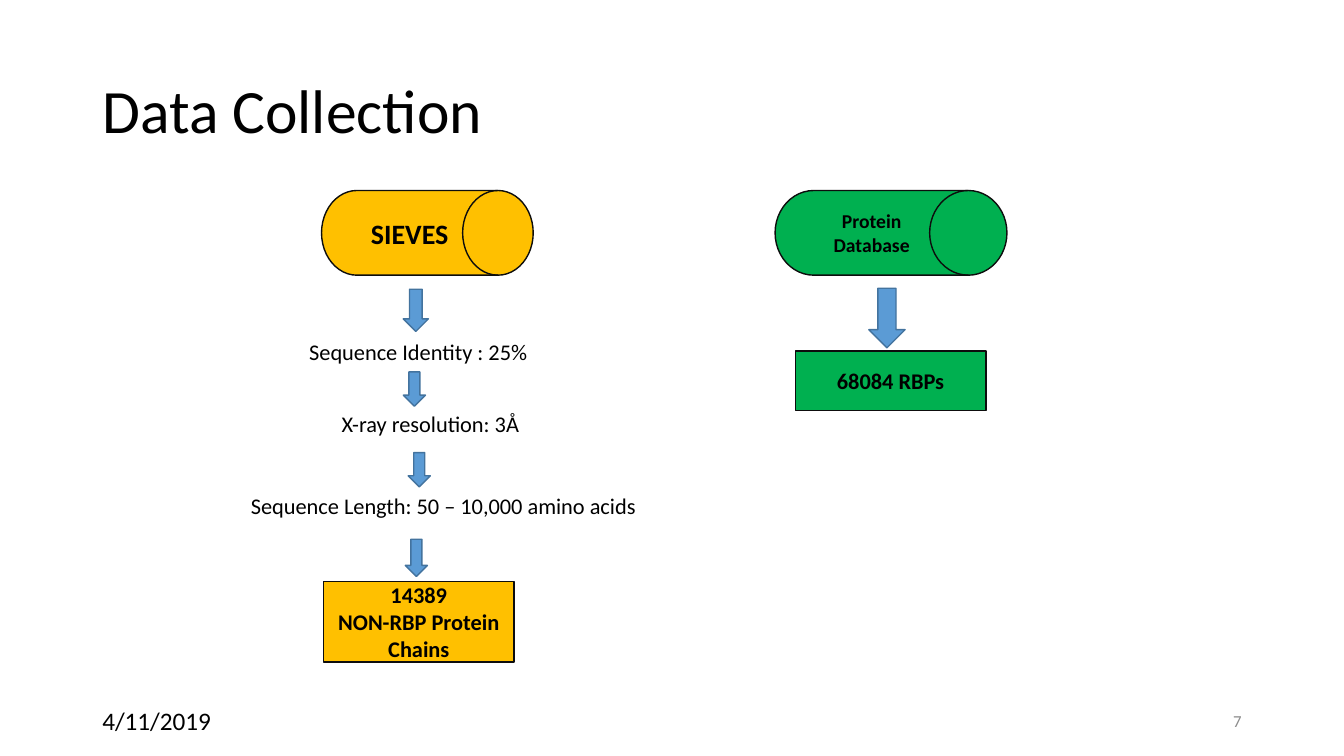
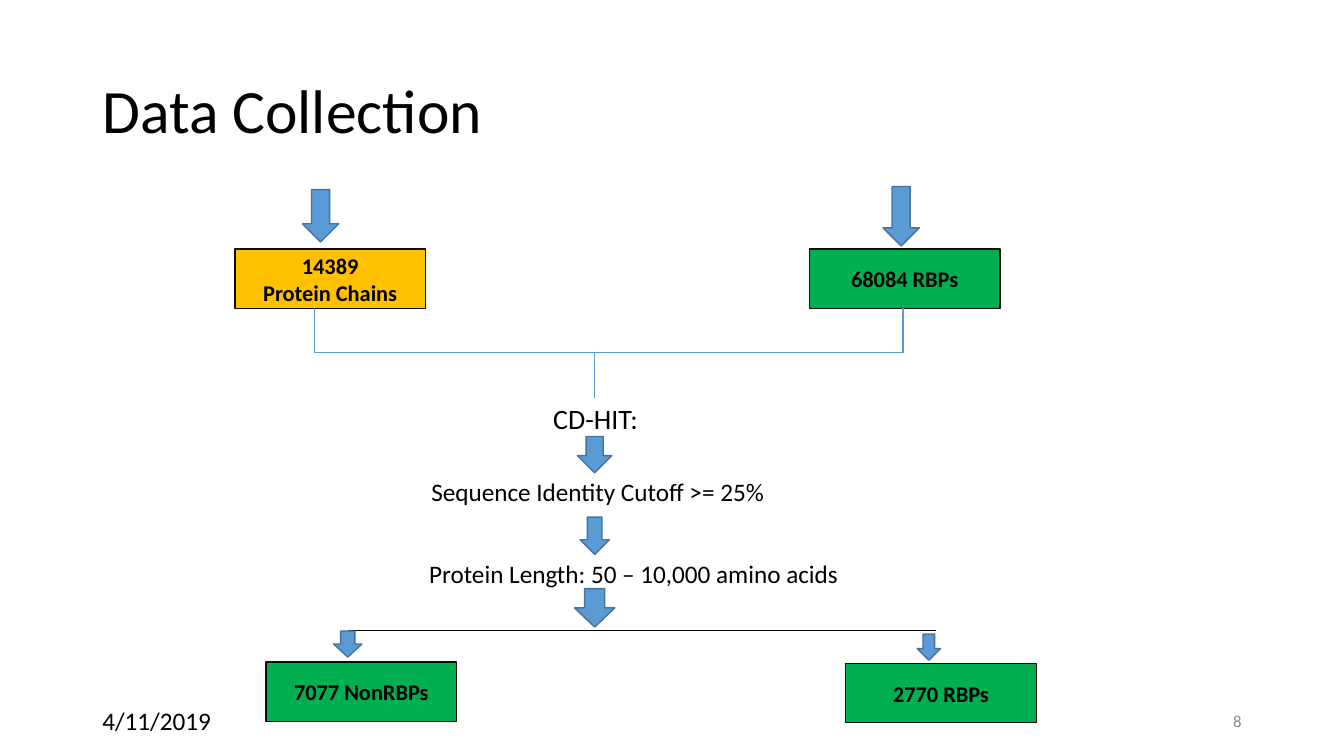
from dataclasses import dataclass

import lxml.etree
import pptx
import pptx.dml.color
import pptx.enum.shapes
import pptx.enum.text
import pptx.oxml.ns
import pptx.util

Pt = pptx.util.Pt
RGB = pptx.dml.color.RGBColor
KIND = pptx.enum.shapes.MSO_SHAPE
ALIGN = pptx.enum.text.PP_ALIGN
ANCHOR = pptx.enum.text.MSO_ANCHOR

FONT = "Calibri"
BLACK = RGB(0x00, 0x00, 0x00)
INK = RGB(0x0D, 0x0D, 0x0D)
GRAY = RGB(0x8C, 0x8C, 0x8C)
GOLD = RGB(0xFF, 0xC0, 0x00)
GREEN = RGB(0x00, 0xB0, 0x50)
BLUE = RGB(0x5B, 0x9B, 0xD5)
NAVY = RGB(0x43, 0x73, 0x9E)

BOX_W, BOX_H = 136.1, 42.5
DRUM_H = 60.5
LEFT, WIDTH = 66, 828
FOOT_TOP, FOOT_W, FOOT_H = 500.4, 216, 28.8


@dataclass
class Box:
    left: float
    top: float
    fill: RGB
    lines: tuple[str, ...]
    size: float = 16
    width: float = BOX_W
    height: float = BOX_H
    kind: KIND = KIND.RECTANGLE


@dataclass
class Arrow:
    mid: float
    top: float
    width: float
    height: float


@dataclass
class Label:
    left: float
    top: float
    width: float
    height: float
    text: str
    size: float
    color: RGB = BLACK
    align: ALIGN = ALIGN.LEFT
    anchor: ANCHOR = ANCHOR.TOP


@dataclass
class Line:
    start: tuple[float, float]
    end: tuple[float, float]
    color: RGB = BLUE
    weight: float = 1


def write(frame, lines: tuple[str, ...], size: float, color: RGB = BLACK,
          align: ALIGN = ALIGN.LEFT, anchor: ANCHOR = ANCHOR.TOP,
          bold: bool = False) -> None:
    """Fill a text frame with one paragraph per line."""
    frame.word_wrap = True
    frame.auto_size = pptx.enum.text.MSO_AUTO_SIZE.NONE
    frame.vertical_anchor = anchor
    for i, line in enumerate(lines):
        para = frame.paragraphs[0] if i == 0 else frame.add_paragraph()
        para.alignment = align
        run = para.add_run()
        run.text = line
        run.font.name = FONT
        run.font.size = Pt(size)
        run.font.bold = bold
        run.font.color.rgb = color


def add_form(slide, kind: KIND, left: float, top: float, width: float,
             height: float, fill: RGB, edge: RGB):
    form = slide.shapes.add_shape(kind, Pt(left), Pt(top), Pt(width), Pt(height))
    form.shadow.inherit = False
    form.fill.solid()
    form.fill.fore_color.rgb = fill
    form.line.color.rgb = edge
    form.line.width = Pt(1)
    return form


def draw_box(slide, box: Box) -> None:
    form = add_form(slide, box.kind, box.left, box.top, box.width, box.height,
                    box.fill, INK)
    write(form.text_frame, box.lines, box.size, align=ALIGN.CENTER,
          anchor=ANCHOR.MIDDLE, bold=True)


def draw_arrow(slide, arrow: Arrow) -> None:
    add_form(slide, KIND.DOWN_ARROW, arrow.mid - arrow.width / 2, arrow.top,
             arrow.width, arrow.height, BLUE, NAVY)


def draw_label(slide, label: Label) -> None:
    area = slide.shapes.add_textbox(Pt(label.left), Pt(label.top),
                                    Pt(label.width), Pt(label.height))
    write(area.text_frame, (label.text,), label.size, label.color,
          label.align, label.anchor)


def draw_line(slide, line: Line) -> None:
    link = slide.shapes.add_connector(
        pptx.enum.shapes.MSO_CONNECTOR.STRAIGHT,
        *(Pt(n) for n in line.start + line.end))
    link.line.color.rgb = line.color
    link.line.width = Pt(line.weight)
    props = link.element.find(pptx.oxml.ns.qn("p:spPr"))
    lxml.etree.SubElement(props, pptx.oxml.ns.qn("a:effectLst"))


DRAW = {Box: draw_box, Arrow: draw_arrow, Label: draw_label, Line: draw_line}


def add_page(deck, number: int, items: list) -> None:
    """Add a slide with the shared title and footer, then its items."""
    slide = deck.slides.add_slide(deck.slide_layouts[5])
    title = slide.shapes.title
    title.left, title.top = Pt(LEFT), Pt(28.8)
    title.width, title.height = Pt(WIDTH), Pt(104.4)
    write(title.text_frame, ("Data Collection",), 44, anchor=ANCHOR.MIDDLE)
    title.text_frame.paragraphs[0].line_spacing = 0.9
    foot = [
        Label(LEFT, FOOT_TOP, FOOT_W, FOOT_H, "4/11/2019", 18),
        Label(LEFT + WIDTH - FOOT_W, FOOT_TOP, FOOT_W, FOOT_H, str(number), 12,
              GRAY, ALIGN.RIGHT, ANCHOR.MIDDLE),
    ]
    for item in items + foot:
        DRAW[type(item)](slide, item)


def source_items() -> list:
    """Both data sources and the filters under the first one."""
    drum = KIND.FLOWCHART_DIRECT_ACCESS_STORAGE
    return [
        Box(229.7, 136.1, GOLD, ("SIEVES",), 20, 151.2, DRUM_H, drum),
        Arrow(297, 206.6, 18, 30.2),
        Label(213.8, 238.3, 255, 24.5, "Sequence Identity : 25%", 16),
        Arrow(296, 265.7, 15.8, 24.5),
        Label(236.9, 289.4, 331.2, 24.5, "X-ray resolution: 3Å", 16),
        Arrow(299.5, 323.3, 15.8, 24.5),
        Label(172.1, 347.8, 331.2, 24.5,
              "Sequence Length: 50 – 10,000 amino acids", 16),
        Arrow(297.4, 385.2, 15.8, 26.6),
        Box(231.1, 415.4, GOLD, ("14389", "NON-RBP Protein Chains"),
            height=57.6),
        Box(553.7, 136.1, GREEN, ("Protein Database",), 14, 165.6, DRUM_H, drum),
        Arrow(633.6, 205.9, 25.9, 42.5),
        Box(568.1, 250.6, GREEN, ("68084 RBPs",)),
    ]


def filter_items() -> list:
    """Both sets joined, filtered and split again."""
    mid, west, east = 424.8, 224.6, 645.1
    base, bar = 220.3, 252
    return [
        Arrow(229, 135.4, 25.9, 37.4),
        Box(167.8, 177.8, GOLD, ("14389", "Protein Chains")),
        Arrow(643.7, 133.2, 25.9, 42.5),
        Box(578.2, 177.8, GREEN, ("68084 RBPs",)),
        Line((west, base), (west, bar)),
        Line((west, bar), (east, bar)),
        Line((east, base), (east, bar)),
        Line((mid, bar), (mid, 284.4)),
        Label(388.1, 283, 103.7, 28.8, "CD-HIT:", 20),
        Arrow(mid, 311.8, 24.5, 25.9),
        Label(301, 337, 331.2, 28.8, "Sequence Identity Cutoff >= 25%", 18),
        Arrow(mid, 369.4, 20.9, 26.6),
        Label(299.5, 395.3, 331.2, 28.8,
              "Protein Length: 50 – 10,000 amino acids", 18),
        Line((668.9, 450), (248.4, 450), BLACK, 0.5),
        Arrow(248.4, 450.7, 20.2, 18.7),
        Box(190.1, 473, GREEN, ("7077 NonRBPs",)),
        Arrow(663.5, 452.9, 16.6, 18.7),
        Box(604.1, 473.8, GREEN, ("2770 RBPs",)),
        Arrow(mid, 420.5, 28.8, 27.4),
    ]


def main() -> None:
    deck = pptx.Presentation()
    deck.slide_width, deck.slide_height = Pt(960), Pt(540)
    for number, items in enumerate((source_items(), filter_items()), 7):
        add_page(deck, number, items)
    deck.save("out.pptx")


if __name__ == "__main__":
    main()
